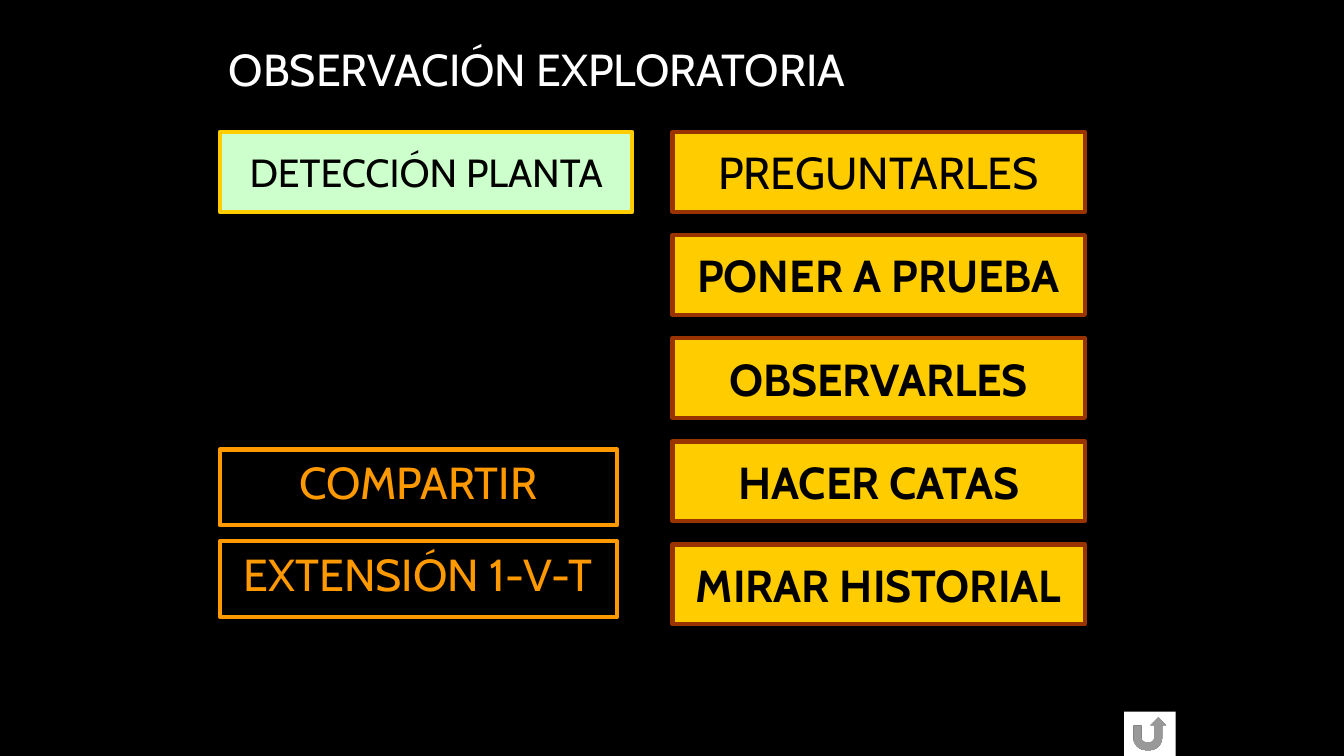
from pptx import Presentation
from pptx.dml.color import RGBColor
from pptx.enum import shapes, text
from pptx.util import Inches, Pt

FONT = "Cabin"
BLACK, WHITE = "000000", "FFFFFF"
GOLD, BROWN, ORANGE, MINT = "FFCC00", "993300", "FF9900", "CCFFCC"
LEFT_COLUMN, RIGHT_COLUMN = 2.18, 6.67
TOP_ROW = 1.31
WIDE_BOX = (4.09, 0.79)
OUTLINE_BOX = (3.94, 0.75)


def color(hex_string):
    return RGBColor.from_string(hex_string)


def write(frame, words, size, ink, align, anchor, bold=False):
    frame.vertical_anchor = anchor
    paragraph = frame.paragraphs[0]
    paragraph.alignment = align
    run = paragraph.add_run()
    run.text = words
    run.font.name = FONT
    run.font.size = Pt(size)
    run.font.bold = bold
    run.font.color.rgb = color(ink)


def add_title(slide, words):
    title = slide.shapes.title
    title.left, title.top = Inches(2.17), Inches(0.3)
    title.width, title.height = Inches(9), Inches(0.77)
    write(title.text_frame, words, 32, WHITE,
          text.PP_ALIGN.LEFT, text.MSO_ANCHOR.MIDDLE)


def add_box(slide, words, position, box_size, fill, line, ink=BLACK,
            size=32, bold=False, anchor=text.MSO_ANCHOR.MIDDLE):
    """Add a framed label; a fill of None leaves it see-through."""
    shape = slide.shapes.add_shape(
        shapes.MSO_SHAPE.RECTANGLE,
        *[Inches(length) for length in position + box_size])
    shape.shadow.inherit = False
    if fill:
        shape.fill.solid()
        shape.fill.fore_color.rgb = color(fill)
    else:
        shape.fill.background()
    shape.line.color.rgb = color(line)
    shape.line.width = Pt(3)
    shape.text_frame.word_wrap = False
    write(shape.text_frame, words, size, ink,
          text.PP_ALIGN.CENTER, anchor, bold)


def add_return_button(slide):
    button = slide.shapes.add_shape(
        shapes.MSO_SHAPE.ACTION_BUTTON_RETURN,
        Inches(11.15), Inches(7.06), Inches(0.51), Inches(0.44))
    button.shadow.inherit = False
    button.fill.solid()
    button.fill.fore_color.rgb = color(WHITE)
    button.line.fill.background()


def main():
    presentation = Presentation()
    presentation.slide_width = Inches(13.33)
    presentation.slide_height = Inches(7.5)
    slide = presentation.slides.add_slide(presentation.slide_layouts[5])
    slide.background.fill.solid()
    slide.background.fill.fore_color.rgb = color(BLACK)

    add_title(slide, "OBSERVACIÓN EXPLORATORIA")
    add_box(slide, "DETECCIÓN PLANTA", (LEFT_COLUMN, TOP_ROW), WIDE_BOX,
            MINT, GOLD, size=28)

    methods = ["PREGUNTARLES", "PONER A PRUEBA", "OBSERVARLES",
               "HACER CATAS", "MIRAR HISTORIAL"]
    for row, method in enumerate(methods):
        add_box(slide, method, (RIGHT_COLUMN, TOP_ROW + 1.023 * row),
                WIDE_BOX, GOLD, BROWN, bold=row > 0)

    add_return_button(slide)
    for row, step in enumerate(["COMPARTIR", "EXTENSIÓN 1-V-T"]):
        add_box(slide, step, (LEFT_COLUMN, 4.46 + 0.91 * row), OUTLINE_BOX,
                None, ORANGE, ink=ORANGE, anchor=text.MSO_ANCHOR.TOP)

    presentation.save("out.pptx")


if __name__ == "__main__":
    main()
